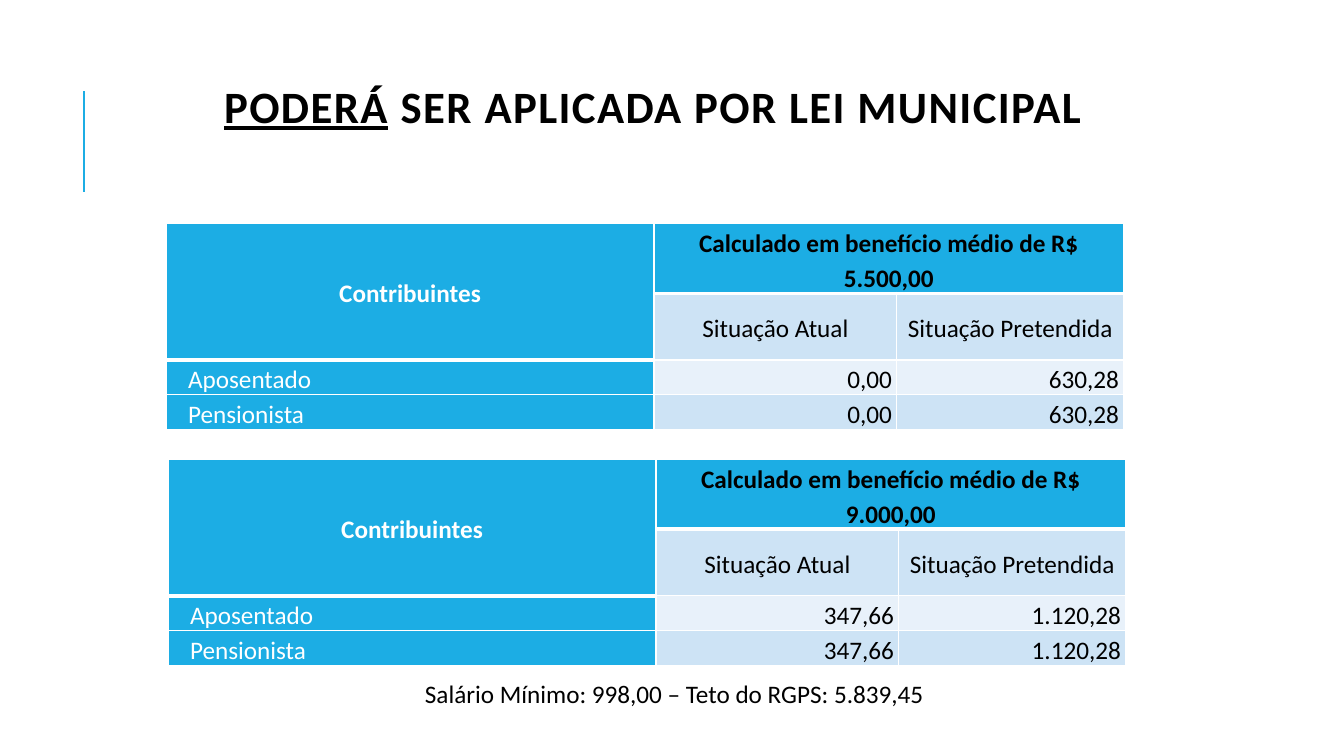
from lxml import etree
from pptx import Presentation
from pptx.dml.color import RGBColor
from pptx.enum.shapes import MSO_CONNECTOR
from pptx.enum.text import MSO_ANCHOR, PP_ALIGN
from pptx.oxml import parse_xml
from pptx.oxml.ns import nsdecls, qn
from pptx.util import Cm, Pt

LEFT, CENTER, RIGHT = PP_ALIGN.LEFT, PP_ALIGN.CENTER, PP_ALIGN.RIGHT
MIDDLE, BOTTOM = MSO_ANCHOR.MIDDLE, MSO_ANCHOR.BOTTOM
STRAIGHT = MSO_CONNECTOR.STRAIGHT
BLACK = RGBColor(0x00, 0x00, 0x00)
WHITE = RGBColor(0xFF, 0xFF, 0xFF)
BLUE = RGBColor(0x1C, 0xAD, 0xE4)
BAND_DARK = RGBColor(0xCD, 0xE3, 0xF5)
BAND_LIGHT = RGBColor(0xE8, 0xF1, 0xFA)
FONT = "Calibri"
COLUMN_WIDTHS = [12.29, 6.12, 5.72]
ROW_HEIGHTS = [1.68, 1.68, 0.81, 0.84]
HEAVY_BOTTOMS = {(0, 0), (0, 1), (0, 2), (1, 0)}
TABLES = [
    (4.19, 5.64, "5.500,00", "0,00", "630,28"),
    (4.24, 11.58, "9.000,00", "347,66", "1.120,28"),
]


def format_runs(paragraph, size, color, bold=False):
    for run in paragraph.runs:
        run.font.name = FONT
        run.font.size = Pt(size)
        run.font.bold = bold
        run.font.color.rgb = color


def add_borders(cell, row, column):
    heavy_top = (row - 1, column) in HEAVY_BOTTOMS
    heavy_bottom = (row, column) in HEAVY_BOTTOMS
    widths = {"L": 1, "R": 1, "T": 3 if heavy_top else 1, "B": 3 if heavy_bottom else 1}
    properties = cell._tc.get_or_add_tcPr()
    for side, width in widths.items():
        properties.append(parse_xml(
            f'<a:ln{side} {nsdecls("a")} w="{Pt(width)}"><a:solidFill>'
            f'<a:srgbClr val="{WHITE}"/></a:solidFill></a:ln{side}>'))


presentation = Presentation()
presentation.slide_width = Cm(33.87)
presentation.slide_height = Cm(19.05)
slide = presentation.slides.add_slide(presentation.slide_layouts[6])

accent_line = slide.shapes.add_connector(STRAIGHT, Cm(2.12), Cm(4.83), Cm(2.12), Cm(2.29))
accent_line.line.color.rgb = BLUE
accent_line.line.width = Pt(1.5)
etree.SubElement(accent_line._element.spPr, qn("a:effectLst"))

title = slide.shapes.add_textbox(Cm(2.49), Cm(1.65), Cm(27.94), Cm(2.26))
title.text_frame.word_wrap = True
title.text_frame.vertical_anchor = MIDDLE
paragraph = title.text_frame.paragraphs[0]
paragraph.alignment = CENTER
paragraph.line_spacing = 0.8
for text in ["PODERÁ", " SER APLICADA POR LEI MUNICIPAL"]:
    run = paragraph.add_run()
    run.text = text
    run.font._element.set("spc", "100")
format_runs(paragraph, 32, BLACK, bold=True)
paragraph.runs[0].font.underline = True

for left, top, benefit, current, intended in TABLES:
    rows = [
        ["Contribuintes", f"Calculado em benefício médio de R$ {benefit}", ""],
        ["", "Situação Atual", "Situação Pretendida"],
        ["Aposentado", current, intended],
        ["Pensionista", current, intended],
    ]
    table = slide.shapes.add_table(
        len(rows), len(COLUMN_WIDTHS), Cm(left), Cm(top),
        Cm(sum(COLUMN_WIDTHS)), Cm(sum(ROW_HEIGHTS))).table
    for column, width in zip(table.columns, COLUMN_WIDTHS):
        column.width = Cm(width)
    for row, height in zip(table.rows, ROW_HEIGHTS):
        row.height = Cm(height)
    table.cell(0, 0).merge(table.cell(1, 0))
    table.cell(0, 1).merge(table.cell(0, 2))

    for row_index, texts in enumerate(rows):
        for column_index, text in enumerate(texts):
            is_header = row_index < 2
            is_label = column_index == 0
            cell = table.cell(row_index, column_index)
            add_borders(cell, row_index, column_index)
            cell.fill.solid()
            if is_label or row_index == 0:
                cell.fill.fore_color.rgb = BLUE
            else:
                cell.fill.fore_color.rgb = BAND_LIGHT if row_index == 2 else BAND_DARK
            cell.margin_left = cell.margin_right = Cm(0.12)
            cell.margin_top = cell.margin_bottom = Cm(0)
            cell.vertical_anchor = MIDDLE if is_header or is_label else BOTTOM
            if not text:
                continue
            cell.text_frame.text = text
            paragraph = cell.text_frame.paragraphs[0]
            paragraph.line_spacing = 1.15
            paragraph.alignment = CENTER if is_header else LEFT if is_label else RIGHT
            if is_label and not is_header:
                paragraph._p.get_or_add_pPr().set("indent", str(Cm(0.43)))
            format_runs(paragraph, 18, WHITE if is_label else BLACK, bold=row_index == 0)

footnote = slide.shapes.add_textbox(Cm(10.46), Cm(16.97), Cm(13.49), Cm(1.02))
footnote.text_frame.word_wrap = False
footnote.text_frame.text = "Salário Mínimo: 998,00 – Teto do RGPS: 5.839,45"
format_runs(footnote.text_frame.paragraphs[0], 18, BLACK)

presentation.save("out.pptx")
